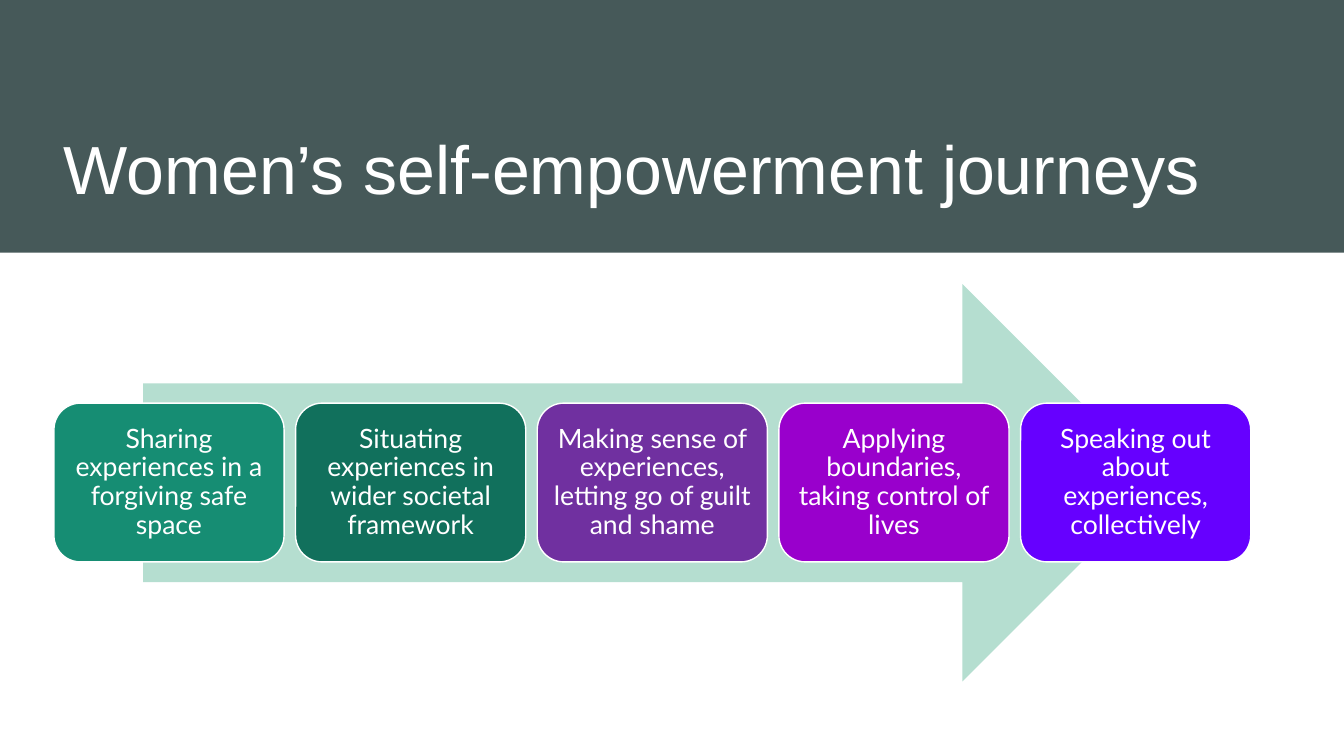
from dataclasses import dataclass

import pptx
import pptx.dml.color
import pptx.enum.shapes
import pptx.enum.text
import pptx.util

Cm = pptx.util.Cm
Pt = pptx.util.Pt
MSO_SHAPE = pptx.enum.shapes.MSO_SHAPE
MSO_ANCHOR = pptx.enum.text.MSO_ANCHOR
PP_ALIGN = pptx.enum.text.PP_ALIGN


@dataclass(frozen=True)
class Theme:
    band: str = "465959"
    arrow: str = "B5DED0"
    white: str = "FFFFFF"
    title_font: str = "Arial"
    title_size: float = 48.6
    step_font: str = "Lato"
    step_size: float = 19


theme = Theme()


def rgb(value):
    return pptx.dml.color.RGBColor.from_string(value)


def add_filled_shape(kind, left, top, width, height, color):
    """Add a preset shape with a solid fill, no outline and no shadow; lengths in cm."""
    shape = slide.shapes.add_shape(kind, Cm(left), Cm(top), Cm(width), Cm(height))
    shape.shadow.inherit = False
    shape.fill.solid()
    shape.fill.fore_color.rgb = rgb(color)
    shape.line.fill.background()
    return shape


presentation = pptx.Presentation()
presentation.slide_width = Cm(33.87)
presentation.slide_height = Cm(19.05)
slide = presentation.slides.add_slide(presentation.slide_layouts[5])

# Title on a dark band
title = slide.shapes.title
title.left, title.top, title.width, title.height = Cm(1.35), Cm(1.02), Cm(30.2), Cm(4.37)
title.text_frame.text = "Women’s self-empowerment journeys"
title.text_frame.auto_size = pptx.enum.text.MSO_AUTO_SIZE.NONE
title.text_frame.vertical_anchor = MSO_ANCHOR.BOTTOM
paragraph = title.text_frame.paragraphs[0]
paragraph.alignment = PP_ALIGN.LEFT
paragraph.line_spacing = 0.9
paragraph.font.name = theme.title_font
paragraph.font.size = Pt(theme.title_size)
paragraph.font.color.rgb = rgb(theme.white)

band = add_filled_shape(MSO_SHAPE.RECTANGLE, 0, 0, 33.87, 6.37, theme.band)
title.element.addprevious(band.element)  # the band lies behind the title

# Journey arrow with its steps
add_filled_shape(MSO_SHAPE.RIGHT_ARROW, 3.61, 7.16, 25.65, 10.01, theme.arrow)

steps = [
    ("Sharing experiences in a forgiving safe space", "168D73"),
    ("Situating experiences in wider societal framework", "11705C"),
    ("Making sense of experiences, letting go of guilt and shame", "7030A0"),
    ("Applying boundaries, taking control of lives", "9900CC"),
    ("Speaking out about experiences, collectively", "6600FF"),
]
first_left, step_pitch = 1.36, 6.09

for index, (text, color) in enumerate(steps):
    left = first_left + index * step_pitch
    step = add_filled_shape(MSO_SHAPE.ROUNDED_RECTANGLE, left, 10.16, 5.8, 4, color)
    step.line.color.rgb = rgb(theme.white)
    step.line.width = Pt(1)
    frame = step.text_frame
    frame.word_wrap = True
    frame.vertical_anchor = MSO_ANCHOR.MIDDLE
    frame.margin_left = frame.margin_right = Cm(0.2)
    frame.margin_top = frame.margin_bottom = Cm(0.2)
    frame.text = text
    paragraph = frame.paragraphs[0]
    paragraph.alignment = PP_ALIGN.CENTER
    paragraph.line_spacing = 0.9
    paragraph.font.name = theme.step_font
    paragraph.font.size = Pt(theme.step_size)
    paragraph.font.color.rgb = rgb(theme.white)

presentation.save("out.pptx")
